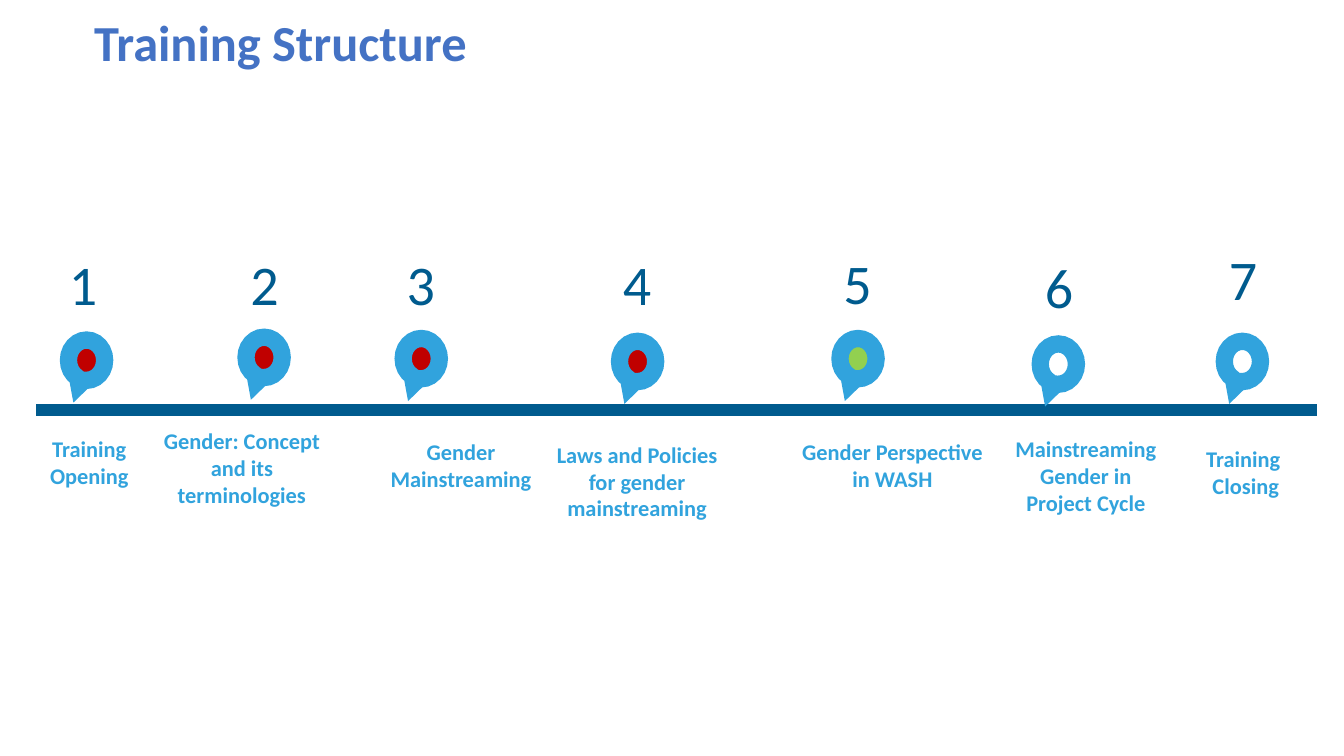
from dataclasses import dataclass
from typing import NamedTuple

from lxml.etree import SubElement
from pptx import Presentation
from pptx.dml.color import RGBColor
from pptx.enum.shapes import MSO_CONNECTOR, MSO_SHAPE
from pptx.enum.text import MSO_ANCHOR, MSO_AUTO_SIZE, PP_ALIGN
from pptx.oxml.ns import qn
from pptx.slide import Slide
from pptx.text.text import TextFrame, _Paragraph
from pptx.util import Pt


@dataclass(frozen=True)
class Theme:
    font: str = "Calibri"
    title: str = "4472C4"
    dark: str = "005B8E"
    light: str = "31A3DD"
    done: str = "C00000"
    current: str = "92D050"
    ahead: str = "FFFFFF"
    title_size: float = 27
    number_size: float = 30
    label_size: float = 12
    bar_width: float = 6.75
    pin_border: float = 9.25


class Area(NamedTuple):
    left: float
    top: float
    width: float
    height: float

    def lengths(self) -> tuple[Pt, ...]:
        return tuple(Pt(value) for value in self)


class Margins(NamedTuple):
    left: float
    top: float
    right: float
    bottom: float


class Session(NamedTuple):
    number: Area
    pin_left: float
    pin_top: float
    fill: str
    label: Area
    lines: tuple[str, ...]


THEME = Theme()
PIN_WIDTH, PIN_HEIGHT = 19.4, 21.6
NUMBER_HEIGHT = 47.5
BAR_LEFT, BAR_RIGHT, BAR_Y = 19.4, 705.6, 219.6
NUMBER_MARGINS = Margins(0, 0, 0, 11.5)
LABEL_MARGINS = Margins(2.2, 10.8, 2.2, 0)

SESSIONS = [
    Session(Area(19.4, 133.9, 50.4, NUMBER_HEIGHT), 36.7, 182.2, THEME.done,
            Area(19.4, 222.5, 56.9, 61.2), ("Training Opening",)),
    Session(Area(120.2, 133.9, 43.2, NUMBER_HEIGHT), 131.8, 180.7, THEME.done,
            Area(76.3, 218.2, 106.6, 57.6), ("Gender: Concept and its terminologies",)),
    Session(Area(203.8, 133.9, 43.2, NUMBER_HEIGHT), 216, 181.4, THEME.done,
            Area(193.7, 223.9, 106.6, 54.7), ("Gender Mainstreaming",)),
    Session(Area(321.1, 133.9, 40.3, NUMBER_HEIGHT), 331.9, 182.9, THEME.done,
            Area(288, 225.4, 106.6, 54.7), ("Laws and Policies for gender mainstreaming",)),
    Session(Area(437.8, 133.2, 43.2, NUMBER_HEIGHT), 450, 181.4, THEME.current,
            Area(424.8, 223.9, 106.6, 54.7), ("Gender Perspective in WASH",)),
    Session(Area(537.1, 135.4, 60.5, NUMBER_HEIGHT), 557.3, 184.3, THEME.ahead,
            Area(537.1, 222.5, 89.3, 54.7), ("Mainstreaming Gender in Project Cycle",)),
    Session(Area(640.8, 131, 50.4, NUMBER_HEIGHT), 655.9, 182.9, THEME.ahead,
            Area(621.4, 227.5, 89.3, 54.7), ("Training", " Closing")),
]


def add_span(para: _Paragraph, text: str, size: float, color: str, bold: bool = False) -> None:
    span = para.add_run()
    span.text = text
    span.font.name = THEME.font
    span.font.size = Pt(size)
    span.font.bold = bold
    span.font.color.rgb = RGBColor.from_string(color)


def add_text_box(page: Slide, area: Area, margins: Margins, anchor: MSO_ANCHOR) -> TextFrame:
    frame = page.shapes.add_textbox(*area.lengths()).text_frame
    frame.word_wrap = True
    frame.vertical_anchor = anchor
    frame.margin_left, frame.margin_top, frame.margin_right, frame.margin_bottom = map(Pt, margins)
    return frame


def set_title(page: Slide, text: str) -> None:
    title = page.shapes.title
    title.left, title.top, title.width, title.height = Area(43.2, 2.2, 651.6, 43.9).lengths()
    frame = title.text_frame
    frame.auto_size = MSO_AUTO_SIZE.NONE
    frame.vertical_anchor = MSO_ANCHOR.MIDDLE
    para = frame.paragraphs[0]
    para.alignment = PP_ALIGN.LEFT
    para.line_spacing = 0.9
    add_span(para, text, THEME.title_size, THEME.title, bold=True)


def add_bar(page: Slide) -> None:
    bar = page.shapes.add_connector(
        MSO_CONNECTOR.STRAIGHT, Pt(BAR_LEFT), Pt(BAR_Y), Pt(BAR_RIGHT), Pt(BAR_Y))
    bar.line.color.rgb = RGBColor.from_string(THEME.dark)
    bar.line.width = Pt(THEME.bar_width)
    SubElement(bar._element.spPr, qn("a:effectLst"))


def add_number(page: Slide, number: int, area: Area) -> None:
    frame = add_text_box(page, area, NUMBER_MARGINS, MSO_ANCHOR.MIDDLE)
    frame.auto_size = MSO_AUTO_SIZE.SHAPE_TO_FIT_TEXT
    para = frame.paragraphs[0]
    para.alignment = PP_ALIGN.CENTER
    add_span(para, str(number), THEME.number_size, THEME.dark)


def add_pin(page: Slide, left: float, top: float, fill: str) -> None:
    """Draw a map pin: a small callout whose thick border has a sharp tip."""
    pin = page.shapes.add_shape(
        MSO_SHAPE.OVAL_CALLOUT, *Area(left, top, PIN_WIDTH, PIN_HEIGHT).lengths())
    pin.adjustments[0], pin.adjustments[1] = -0.21, 0.62
    pin.shadow.inherit = False
    pin.fill.solid()
    pin.fill.fore_color.rgb = RGBColor.from_string(fill)
    pin.line.color.rgb = RGBColor.from_string(THEME.light)
    pin.line.width = Pt(THEME.pin_border)
    SubElement(pin.line._get_or_add_ln(), qn("a:miter"), lim="800000")


def add_label(page: Slide, area: Area, lines: tuple[str, ...]) -> None:
    frame = add_text_box(page, area, LABEL_MARGINS, MSO_ANCHOR.TOP)
    for index, line in enumerate(lines):
        para = frame.add_paragraph() if index else frame.paragraphs[0]
        para.alignment = PP_ALIGN.CENTER
        add_span(para, line, THEME.label_size, THEME.light, bold=True)


def main() -> None:
    deck = Presentation()
    deck.slide_width, deck.slide_height = Pt(720), Pt(405)
    page = deck.slides.add_slide(deck.slide_layouts.get_by_name("Title Only"))
    set_title(page, "Training Structure")
    add_bar(page)
    for number, session in enumerate(SESSIONS, start=1):
        add_number(page, number, session.number)
        add_pin(page, session.pin_left, session.pin_top, session.fill)
        add_label(page, session.label, session.lines)
    deck.save("out.pptx")


if __name__ == "__main__":
    main()
